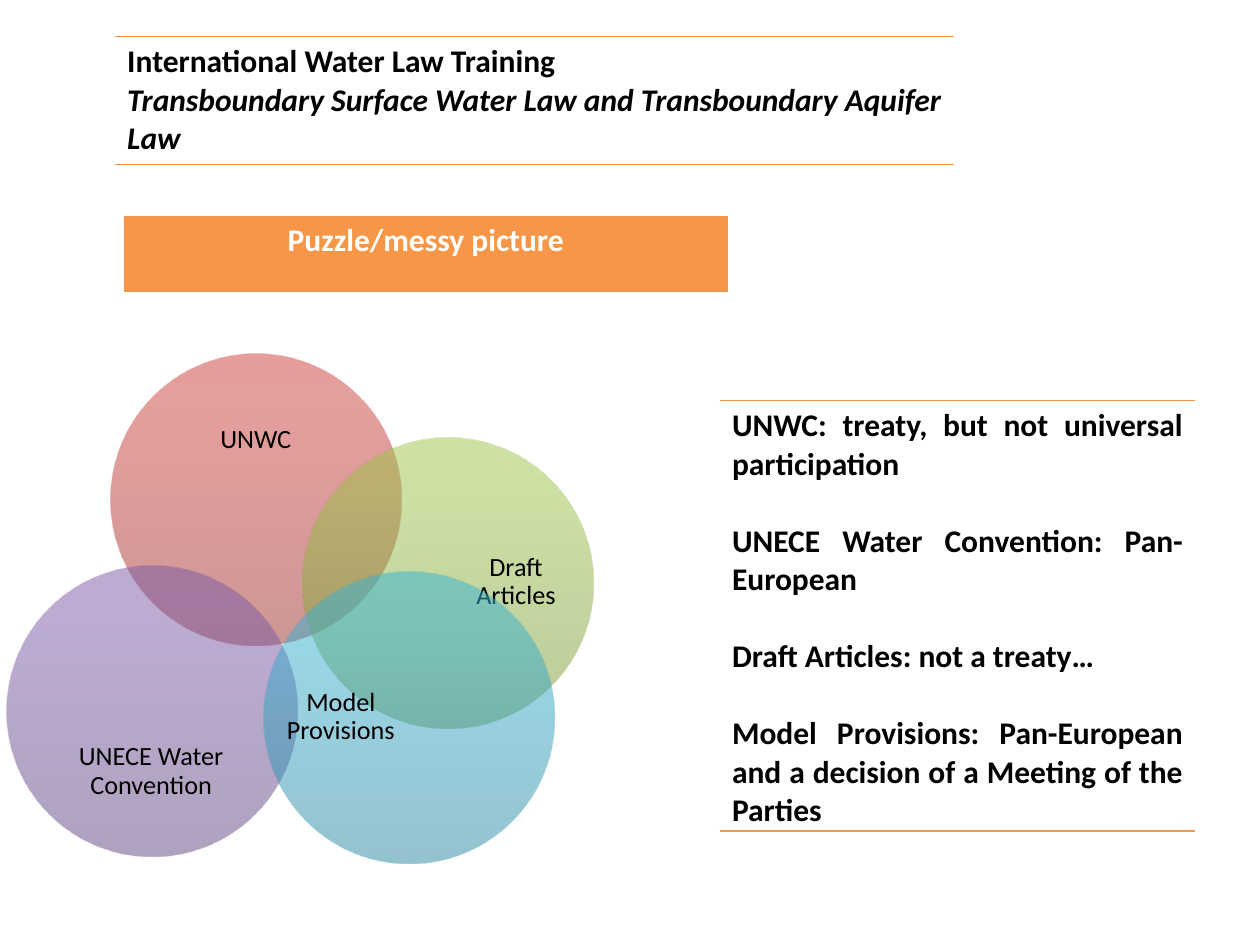
from lxml.etree import SubElement as Sub
from pptx import Presentation
from pptx.dml.color import RGBColor
from pptx.enum.shapes import MSO_SHAPE as Shape
from pptx.enum.text import MSO_ANCHOR as Anchor, PP_ALIGN as Align
from pptx.oxml.ns import qn
from pptx.util import Inches, Pt

COLS, ROWS = 100, 75
ORANGE, WHITE, BLACK = "F79646", "FFFFFF", "000000"
SIZE = 23.1


def tint(code):
    return RGBColor.from_string(code)


class Deck:
    font = "Calibri"

    def __init__(self):
        self.prs = Presentation()
        self.prs.slide_width, self.prs.slide_height = Inches(10), Inches(7.5)
        self.slide = self.prs.slides.add_slide(self.prs.slide_layouts[6])

    def place(self, x, y, w, h):
        dx, dy = self.prs.slide_width / COLS, self.prs.slide_height / ROWS
        return [round(n) for n in (x * dx, y * dy, w * dx, h * dy)]

    def style(self, frame, text, size, color, align, bold=False, gap=0):
        frame.text = text
        for i, par in enumerate(frame.paragraphs):
            par.alignment = align
            if i and gap:
                par.space_before = Pt(gap)
            for run in par.runs:
                font = run.font
                font.name, font.size, font.bold = self.font, Pt(size), bold
                font.color.rgb = tint(color)

    def panel(self, box, text, edges, color=BLACK, fill=None, align=Align.LEFT, gap=0):
        table = self.slide.shapes.add_table(1, 1, *self.place(*box)).table
        table.first_row = table.horz_banding = False
        cell = table.cell(0, 0)
        props = cell._tc.get_or_add_tcPr()
        for side, (edge, width) in edges.items():
            line = Sub(props, qn(f"a:ln{side}"), w=str(Pt(width)))
            Sub(Sub(line, qn("a:solidFill")), qn("a:srgbClr"), val=edge)
        if fill:
            cell.fill.solid()
            cell.fill.fore_color.rgb = tint(fill)
        else:
            cell.fill.background()
        self.style(cell.text_frame, text, 18, color, align, True, gap)
        return cell.text_frame

    def disc(self, x, y, stops):
        disc = self.slide.shapes.add_shape(Shape.OVAL, *self.place(x, y, SIZE, SIZE))
        disc.shadow.inherit = False
        disc.line.fill.background()
        disc.fill.gradient()
        disc.fill.gradient_angle = 90
        ramp = disc._element.spPr.find(qn("a:gradFill")).find(qn("a:gsLst"))
        ramp.clear()
        for pos, code in zip((0, 80, 100), stops):
            stop = Sub(ramp, qn("a:gs"), pos=str(pos * 1000))
            Sub(Sub(stop, qn("a:srgbClr"), val=code), qn("a:alpha"), val="50000")

    def label(self, box, text):
        frame = self.slide.shapes.add_textbox(*self.place(*box)).text_frame
        frame.word_wrap = True
        frame.vertical_anchor = Anchor.MIDDLE
        frame.margin_left = frame.margin_right = frame.margin_top = frame.margin_bottom = 0
        self.style(frame, text, 15, BLACK, Align.CENTER)
        frame.paragraphs[0].line_spacing = 0.9


WIDE, TALL = (17.8, 7.3), (8.9, 17.8)
CIRCLES = [
    ("UNWC", 8.8, 28.1, (2.6, 3.2), WIDE, ("9C2F2D", "CB3E3A", "CE3B37")),
    ("Draft Articles", 24, 34.7, (12.5, 2.6), TALL, ("779737", "9BC348", "9DC746")),
    ("UNECE Water Convention", 0.5, 44.9, (2.6, 12.7), WIDE, ("5F4480", "7B58A6", "7C57A8")),
    ("Model Provisions", 20.9, 45.4, (1.7, 2.6), TALL, ("2A88A2", "37B1D2", "34B4D6")),
]
NOTES = [
    "UNWC: treaty, but not universal participation",
    "UNECE Water Convention: Pan-European",
    "Draft Articles: not a treaty…",
    "Model Provisions: Pan-European and a decision of a Meeting of the Parties",
]
TITLE = [
    "International Water Law Training",
    "Transboundary Surface Water Law and Transboundary Aquifer Law",
]


def main():
    deck = Deck()
    rules = {"T": (ORANGE, 1), "B": (ORANGE, 1)}
    frame = {"L": (WHITE, 1), "R": (WHITE, 1), "T": (WHITE, 1), "B": (WHITE, 3)}
    title = deck.panel((9.1, 2.9, 66.7, 10), "\n".join(TITLE), rules)
    title.paragraphs[1].runs[0].font.italic = True
    deck.panel((9.8, 17.1, 48, 6.3), "Puzzle/messy picture", frame, WHITE, ORANGE, Align.CENTER)
    for name, x, y, (dx, dy), size, stops in CIRCLES:
        deck.disc(x, y, stops)
        deck.label((x + dx, y + dy, *size), name)
    deck.panel((57.1, 31.8, 37.8, 34), "\n".join(NOTES), rules, align=Align.JUSTIFY, gap=22)
    deck.prs.save("out.pptx")


if __name__ == "__main__":
    main()
